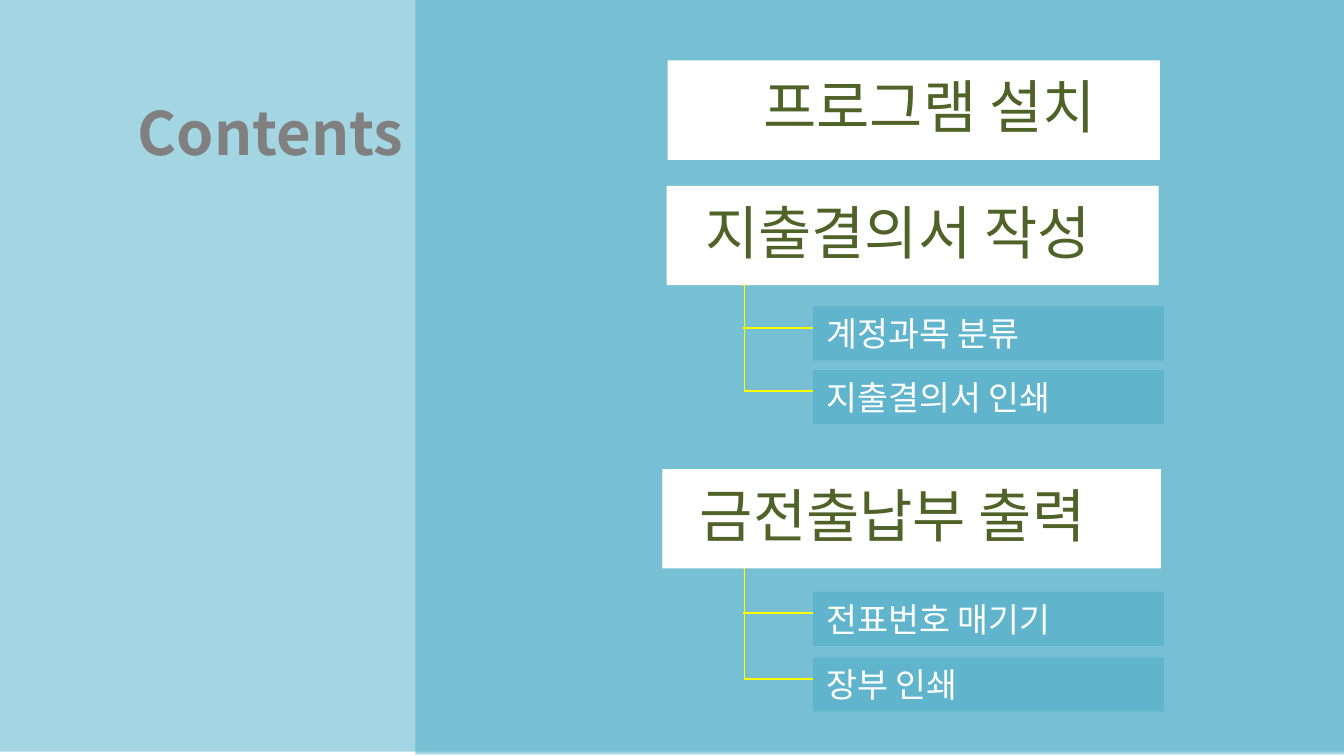
from dataclasses import dataclass

import lxml.etree
import pptx
import pptx.dml.color
import pptx.enum.shapes
import pptx.enum.text
import pptx.oxml
import pptx.oxml.ns
import pptx.util

Cm, Pt = pptx.util.Cm, pptx.util.Pt
Align, Anchor = pptx.enum.text.PP_ALIGN, pptx.enum.text.MSO_ANCHOR
qn = pptx.oxml.ns.qn


@dataclass(frozen=True)
class Theme:
    font: str = "Noto Sans CJK KR"
    teal: str = "4BACC6"
    white: str = "FFFFFF"
    green: str = "4F6228"
    gray: str = "808080"
    yellow: str = "FFFF00"
    title: float = 32
    head: float = 31
    item: float = 18


@dataclass(frozen=True)
class Box:
    left: float
    top: float
    width: float
    height: float

    def place(self) -> tuple:
        return Cm(self.left), Cm(self.top), Cm(self.width), Cm(self.height)


@dataclass(frozen=True)
class Item:
    text: str
    top: float


@dataclass(frozen=True)
class Part:
    text: str
    panel: Box
    label: Box
    items: tuple[Item, ...] = ()


THEME = Theme()
HIGH = 1.88
PARTS = (
    Part("프로그램 설치", Box(12.62, 1.14, 9.3, HIGH), Box(12.45, 1.14, 9.3, HIGH)),
    Part("지출결의서 작성", Box(12.6, 3.51, 9.3, HIGH), Box(11.35, 3.51, 10.36, HIGH),
         (Item("계정과목 분류", 5.79), Item("지출결의서 인쇄", 6.99))),
    Part("금전출납부 출력", Box(12.52, 8.86, 9.42, HIGH), Box(11.25, 8.86, 10.69, HIGH),
         (Item("전표번호 매기기", 11.18), Item("장부 인쇄", 12.42))),
)
STEM, EDGE = 14.05, 15.37  # x of the tree line and of the items
DROP = 0.4  # from an item's top to its branch


def rgb(code: str):
    return pptx.dml.color.RGBColor.from_string(code)


def add_rect(shapes, box: Box, color: str, alpha: int = 100):
    rect = shapes.add_shape(pptx.enum.shapes.MSO_SHAPE.RECTANGLE, *box.place())
    rect.shadow.inherit = False
    rect.line.fill.background()
    rect.fill.solid()
    rect.fill.fore_color.rgb = rgb(color)
    if alpha < 100:
        tint = rect._element.spPr.find(".//" + qn("a:srgbClr"))
        lxml.etree.SubElement(tint, qn("a:alpha"), val=str(alpha * 1000))
    return rect


def write(shape, text: str, size: float, color: str, align=Align.LEFT,
          anchor=Anchor.TOP, bold: bool = False):
    frame = shape.text_frame
    frame.word_wrap = True
    frame.vertical_anchor = anchor
    para = frame.paragraphs[0]
    para.text = text
    para.alignment = align
    font = para.font
    font.name, font.size, font.bold = THEME.font, Pt(size), bold
    font.color.rgb = rgb(color)
    # Hangul takes the East Asian typeface
    latin = para._p.pPr.find(".//" + qn("a:latin"))
    latin.addnext(latin.makeelement(qn("a:ea"), {"typeface": THEME.font}))
    return frame


def add_head(shapes, part: Part) -> None:
    group = shapes.add_group_shape()
    add_rect(group.shapes, part.panel, THEME.white)
    label = group.shapes.add_textbox(*part.label.place())
    frame = write(label, part.text, THEME.head, THEME.green, anchor=Anchor.MIDDLE)
    frame.margin_left = Cm(1.98)
    frame.margin_top = frame.margin_right = frame.margin_bottom = Cm(0.33)
    frame.paragraphs[0].line_spacing = 0.9


def add_branch(shapes, start: float, end: float) -> None:
    line = shapes.add_connector(pptx.enum.shapes.MSO_CONNECTOR.ELBOW,
                                Cm(STEM), Cm(start), Cm(EDGE), Cm(end))
    line.line.color.rgb = rgb(THEME.yellow)
    line.line.width = Pt(1)
    props = line._element.spPr
    lxml.etree.SubElement(props, qn("a:effectLst"))
    # Turn right at the stem
    guides = props.find(qn("a:prstGeom")).find(qn("a:avLst"))
    lxml.etree.SubElement(guides, qn("a:gd"), name="adj1", fmla="val 1700")


def add_items(shapes, part: Part) -> None:
    start = part.panel.top + part.panel.height
    for item in part.items:
        rect = add_rect(shapes, Box(EDGE, item.top, 6.63, 1.02), THEME.teal, 50)
        write(rect, item.text, THEME.item, THEME.white)
        end = item.top + DROP
        add_branch(shapes, start, end)
        start = end


def main() -> None:
    deck = pptx.Presentation()
    deck.slide_width, deck.slide_height = Cm(25.4), Cm(14.28)
    shapes = deck.slides.add_slide(deck.slide_layouts[6]).shapes

    # Backdrop: the right panel darkens where both overlap
    add_rect(shapes, Box(0, -0.08, 25.4, 14.28), THEME.teal, 50)
    add_rect(shapes, Box(7.85, -0.03, 17.55, 14.28), THEME.teal, 50)

    # Title
    title = shapes.add_textbox(*Box(0.51, 1.68, 7.37, 1.63).place())
    write(title, "Contents", THEME.title, THEME.gray, Align.RIGHT, bold=True)

    # Contents tree
    for part in PARTS:
        add_head(shapes, part)
        add_items(shapes, part)

    deck.save("out.pptx")


if __name__ == "__main__":
    main()
